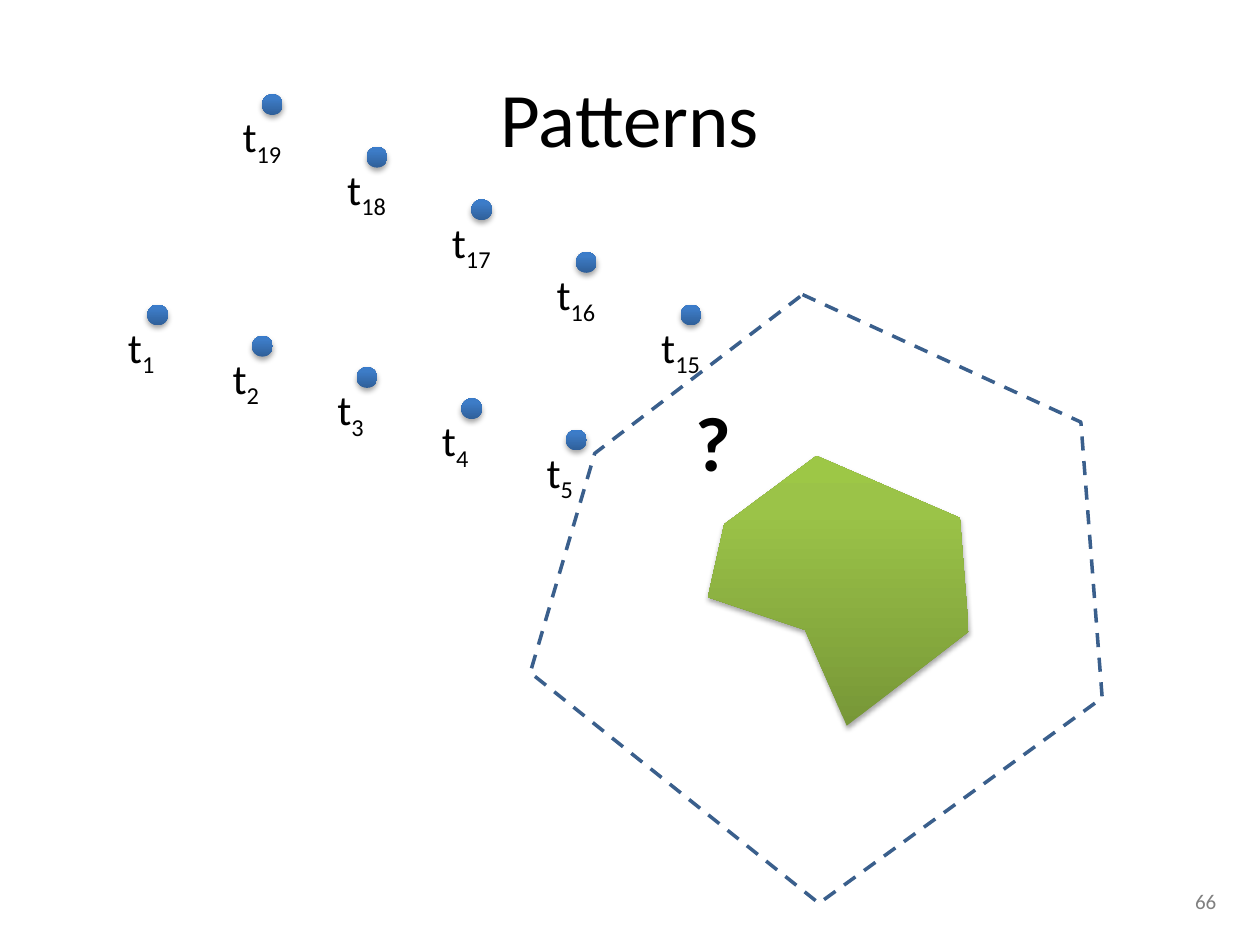
from lxml.etree import SubElement
from pptx import Presentation
from pptx.dml.color import RGBColor
from pptx.enum.dml import MSO_LINE
from pptx.enum.shapes import MSO_SHAPE
from pptx.enum.text import MSO_ANCHOR, MSO_AUTO_SIZE, PP_ALIGN
from pptx.oxml.ns import qn
from pptx.util import Cm, Pt

BLACK = RGBColor(0x00, 0x00, 0x00)
GRAY = RGBColor(0x80, 0x80, 0x80)
OUTLINE = RGBColor(0x3A, 0x5F, 0x8C)
BLUES = [(0, RGBColor(0x2F, 0x5F, 0x99)), (80, RGBColor(0x3D, 0x7C, 0xC7)),
         (100, RGBColor(0x3A, 0x7C, 0xCB))]
GREENS = [(0, RGBColor(0x77, 0x97, 0x37)), (80, RGBColor(0x9B, 0xC3, 0x48)),
          (100, RGBColor(0x9D, 0xC7, 0x46))]

FONT = "Calibri"
DOT_SIZE = 0.42
LABEL_OFFSET = (-0.64, 0.21)
LABEL_HEIGHT = 1.27

OBSTACLE = [(16.46, 9.19), (19.35, 10.44), (19.53, 12.73), (17.07, 14.63),
            (16.23, 12.7), (14.27, 12.04), (14.6, 10.57)]
BOUNDARY = [(16.18, 5.94), (21.79, 8.51), (22.22, 14.07), (16.51, 18.21),
            (10.69, 13.56), (11.99, 9.14)]
TRACKS = [
    {"times": [1, 2, 3, 4, 5], "start": (2.97, 6.14), "step": (2.11, 0.63), "label_width": 1.09},
    {"times": [19, 18, 17, 16, 15], "start": (5.28, 1.9), "step": (2.11, 1.06), "label_width": 1.37},
]


def paint_gradient(shape, stops):
    shape.line.fill.background()
    shape.fill.gradient()
    properties = shape.element.spPr
    gradient = properties.find(qn("a:gradFill"))
    for child in list(gradient):
        gradient.remove(child)
    stop_list = SubElement(gradient, qn("a:gsLst"))
    for position, color in stops:
        stop = SubElement(stop_list, qn("a:gs"), pos=str(position * 1000))
        SubElement(stop, qn("a:srgbClr"), val=str(color))
    SubElement(gradient, qn("a:lin"), ang="16200000", scaled="0")

    shape.shadow.inherit = False
    effects = properties.find(qn("a:effectLst"))
    shadow = SubElement(effects, qn("a:outerShdw"), blurRad=str(Pt(3.1)), dist=str(Pt(1.8)),
                        dir="5400000", rotWithShape="0")
    shadow_color = SubElement(shadow, qn("a:srgbClr"), val=str(BLACK))
    SubElement(shadow_color, qn("a:alpha"), val="35000")


def add_polygon(shapes, points):
    corners = [(Cm(x), Cm(y)) for x, y in points]
    builder = shapes.build_freeform(*corners[0])
    builder.add_line_segments(corners[1:], close=True)
    return builder.convert_to_shape()


def add_text(shapes, box, text, size, color=BLACK, bold=False, subscript="",
             align=PP_ALIGN.LEFT, anchor=MSO_ANCHOR.TOP, wrap=False):
    frame = shapes.add_textbox(*(Cm(length) for length in box)).text_frame
    frame.word_wrap = wrap
    frame.auto_size = MSO_AUTO_SIZE.NONE if wrap else MSO_AUTO_SIZE.SHAPE_TO_FIT_TEXT
    frame.vertical_anchor = anchor
    paragraph = frame.paragraphs[0]
    paragraph.alignment = align
    for content, baseline in ((text, None), (subscript, "-25000")):
        if not content:
            continue
        run = paragraph.add_run()
        run.text = content
        run.font.name = FONT
        run.font.size = Pt(size)
        run.font.bold = bold
        run.font.color.rgb = color
        if baseline:
            run.font._element.set("baseline", baseline)


def add_sighting(slide, time, x, y, label_width):
    shapes = slide.shapes.add_group_shape().shapes
    dot = shapes.add_shape(MSO_SHAPE.OVAL, Cm(x), Cm(y), Cm(DOT_SIZE), Cm(DOT_SIZE))
    paint_gradient(dot, BLUES)
    label_box = (x + LABEL_OFFSET[0], y + LABEL_OFFSET[1], label_width, LABEL_HEIGHT)
    add_text(shapes, label_box, "t", 24, subscript=str(time))


def main():
    presentation = Presentation()
    presentation.slide_width = Cm(25.4)
    presentation.slide_height = Cm(19.05)
    slide = presentation.slides.add_slide(presentation.slide_layouts[6])

    add_text(slide.shapes, (1.27, 0.76, 22.86, 3.18), "Patterns", 44,
             align=PP_ALIGN.CENTER, anchor=MSO_ANCHOR.MIDDLE, wrap=True)

    paint_gradient(add_polygon(slide.shapes, OBSTACLE), GREENS)
    boundary = add_polygon(slide.shapes, BOUNDARY)
    boundary.shadow.inherit = False
    boundary.fill.background()
    boundary.line.color.rgb = OUTLINE
    boundary.line.width = Pt(2)
    boundary.line.dash_style = MSO_LINE.DASH

    for track in TRACKS:
        (left, top), (step_x, step_y) = track["start"], track["step"]
        for index, time in enumerate(track["times"]):
            add_sighting(slide, time, left + index * step_x, top + index * step_y,
                         track["label_width"])

    add_text(slide.shapes, (13.77, 7.82, 1.24, 2.13), "?", 44, bold=True)
    add_text(slide.shapes, (18.85, 17.65, 5.92, 1.02), "66", 12, color=GRAY,
             align=PP_ALIGN.RIGHT, anchor=MSO_ANCHOR.MIDDLE, wrap=True)
    presentation.save("out.pptx")


if __name__ == "__main__":
    main()
